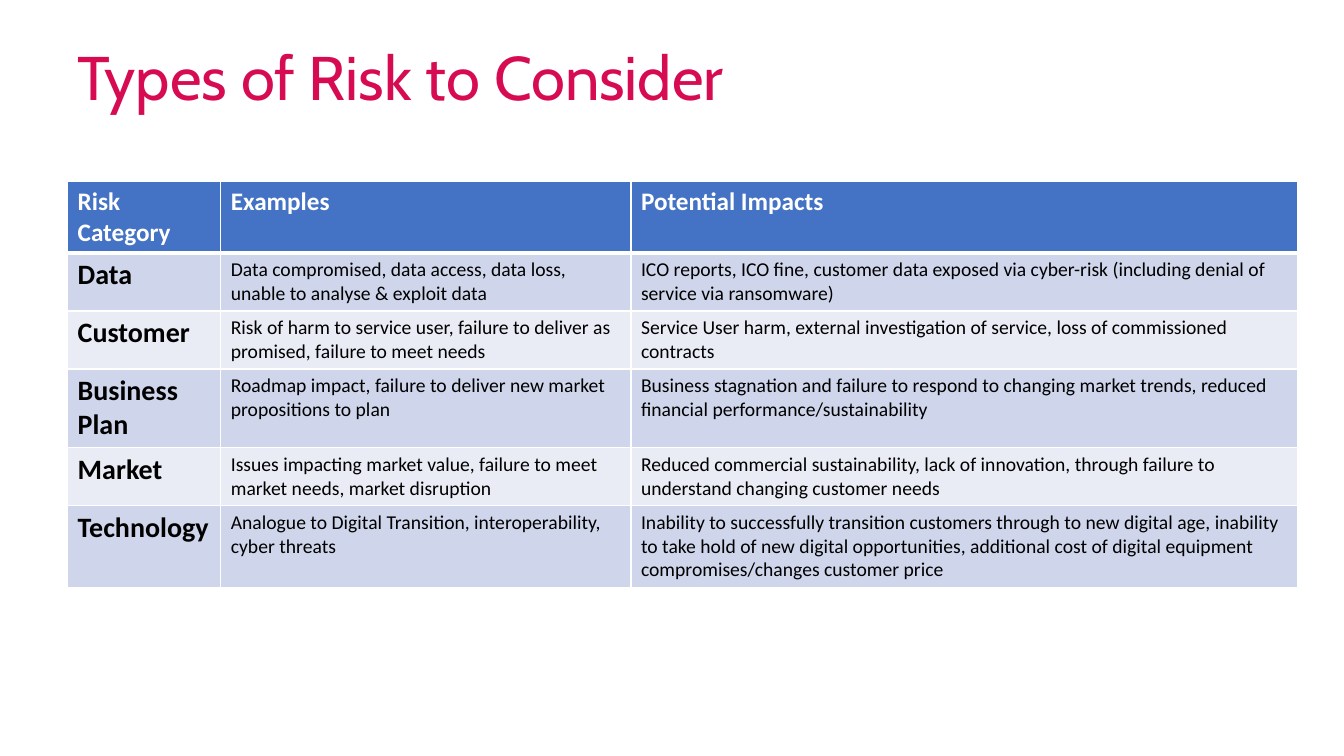
from lxml import etree
from pptx import Presentation
from pptx import util as u
from pptx.dml.color import RGBColor
from pptx.enum import text
from pptx.oxml import ns

HEAD = ["Risk Category", "Examples", "Potential Impacts"]
RISKS = [
    ["Data",
     "Data compromised, data access, data loss, unable to analyse & exploit data",
     "ICO reports, ICO fine, customer data exposed via cyber-risk "
     "(including denial of service via ransomware)"],
    ["Customer",
     "Risk of harm to service user, failure to deliver as promised, failure to meet needs",
     "Service User harm, external investigation of service, loss of commissioned contracts"],
    ["Business Plan",
     "Roadmap impact, failure to deliver new market propositions to plan",
     "Business stagnation and failure to respond to changing market trends, "
     "reduced financial performance/sustainability"],
    ["Market",
     "Issues impacting market value, failure to meet market needs, market disruption",
     "Reduced commercial sustainability, lack of innovation, "
     "through failure to understand changing customer needs"],
    ["Technology",
     "Analogue to Digital Transition, interoperability, cyber threats",
     "Inability to successfully transition customers through to new digital age, "
     "inability to take hold of new digital opportunities, additional cost of "
     "digital equipment compromises/changes customer price"],
]
WIDTHS = [109.4, 293, 476]
HEIGHTS = [51, 41.4, 41.4, 56, 41.4, 58.5]


def color(code):
    return RGBColor.from_string(code)


class Page:
    white, black, pink, blue = "FFFFFF", "000000", "D60B52", "4472C4"
    bands = ["E9EBF5", "CFD5EA"]

    def __init__(self, slide):
        self.slide = slide

    def style(self, para, font, size, code, bold=False):
        for run in para.runs:
            run.font.name = font
            run.font.size = u.Pt(size)
            run.font.bold = bold
            run.font.color.rgb = color(code)

    def title(self, words, left, top, width, height):
        box = self.slide.shapes.title
        box.left, box.top = u.Pt(left), u.Pt(top)
        box.width, box.height = u.Pt(width), u.Pt(height)
        frame = box.text_frame
        frame.text = words
        frame.word_wrap = True
        frame.vertical_anchor = text.MSO_ANCHOR.MIDDLE
        para = frame.paragraphs[0]
        para.alignment = text.PP_ALIGN.LEFT
        para.line_spacing = 0.9
        self.style(para, "Cabin", 44, self.pink)

    def border(self, cell, side, width):
        props = cell._tc.get_or_add_tcPr()
        line = etree.SubElement(props, ns.qn("a:ln" + side), w=str(u.Pt(width)))
        fill = etree.SubElement(line, ns.qn("a:solidFill"))
        etree.SubElement(fill, ns.qn("a:srgbClr"), val=self.white)

    def cell(self, cell, words, row, col):
        # Borders go before the fill; the header rule is thicker
        thick = {(0, "B"), (1, "T")}
        for side in "LRTB":
            self.border(cell, side, 3 if (row, side) in thick else 1)
        cell.fill.solid()
        cell.fill.fore_color.rgb = color(self.bands[row % 2] if row else self.blue)
        cell.text_frame.text = words
        size = 18 if row == 0 else 20 if col == 0 else 14
        self.style(cell.text_frame.paragraphs[0], "Calibri", size,
                   self.black if row else self.white, row == 0 or col == 0)

    def table(self, rows, left, top, widths, heights):
        grid = self.slide.shapes.add_table(
            len(rows), len(widths), u.Pt(left), u.Pt(top),
            u.Pt(sum(widths)), u.Pt(sum(heights))).table
        for col, width in zip(grid.columns, widths):
            col.width = u.Pt(width)
        for row, height in zip(grid.rows, heights):
            row.height = u.Pt(height)
        for r, line in enumerate(rows):
            for c, words in enumerate(line):
                self.cell(grid.cell(r, c), words, r, c)


def main():
    deck = Presentation()
    deck.slide_width, deck.slide_height = u.Pt(960), u.Pt(540)
    page = Page(deck.slides.add_slide(deck.slide_layouts[5]))

    # Title
    page.title("Types of Risk to Consider", 48, 13, 823, 88.5)

    # Risk table
    page.table([HEAD] + RISKS, 48.3, 129.6, WIDTHS, HEIGHTS)

    deck.save("out.pptx")


if __name__ == "__main__":
    main()
